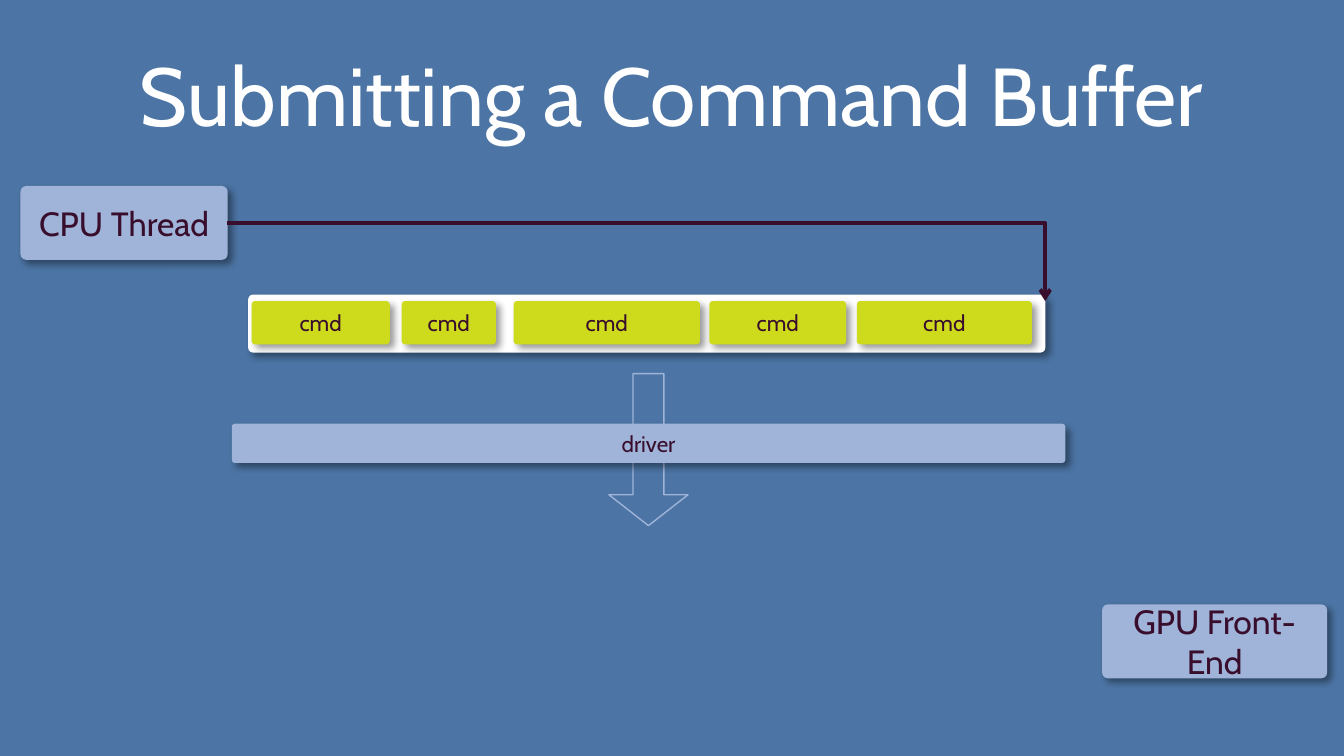
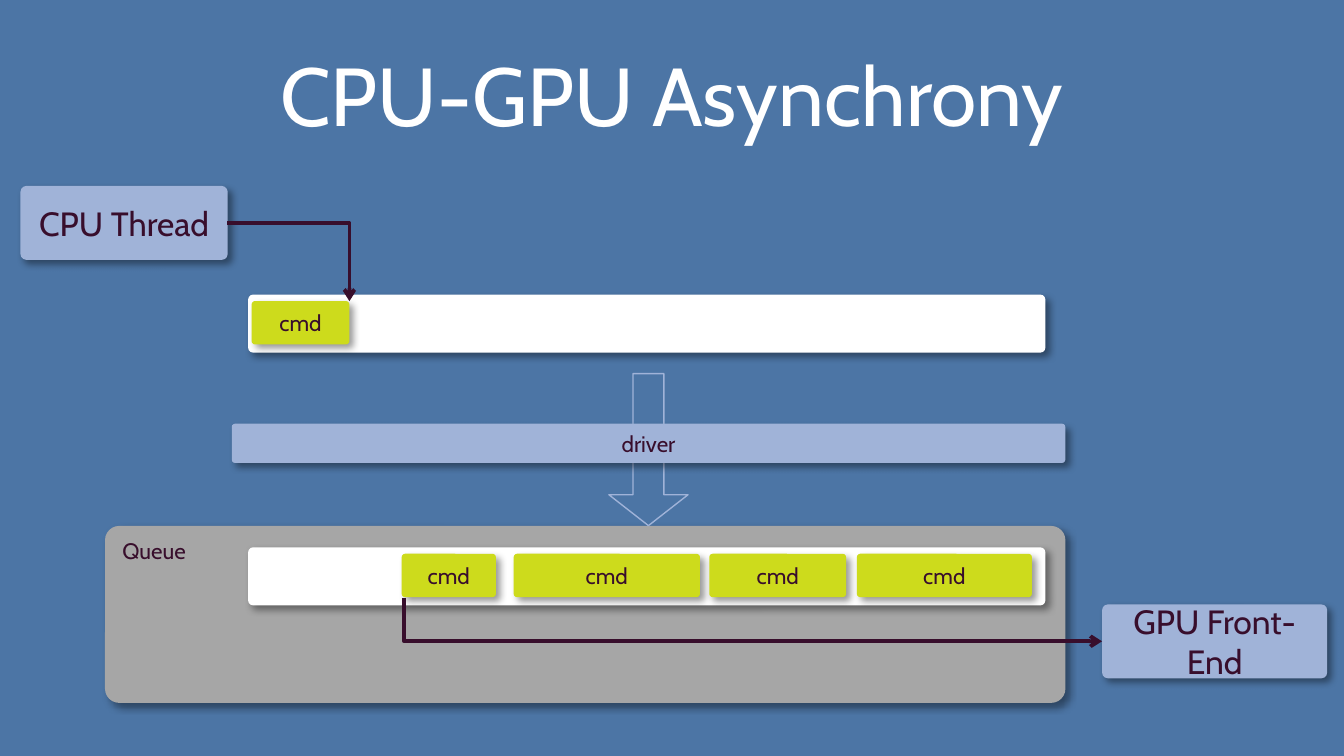
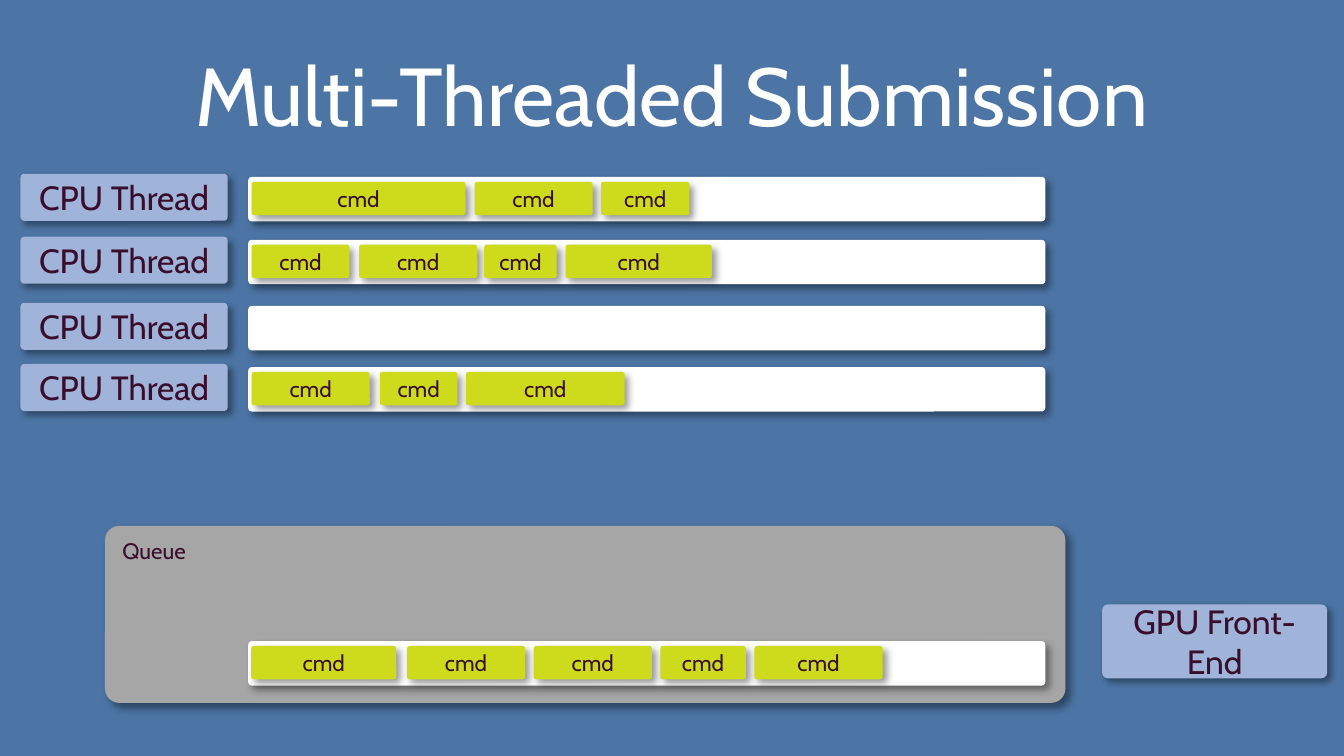
from lxml.etree import SubElement
from pptx import Presentation
from pptx.dml.color import RGBColor
from pptx.enum.shapes import MSO_CONNECTOR, MSO_SHAPE
from pptx.enum.text import MSO_ANCHOR, MSO_AUTO_SIZE, PP_ALIGN
from pptx.oxml.ns import qn
from pptx.util import Pt

# Shared style
BLUE = RGBColor(0x4C, 0x75, 0xA5)
LILAC = RGBColor(0xA0, 0xB3, 0xD8)
GRAY = RGBColor(0xA6, 0xA6, 0xA6)
LIME = RGBColor(0xCD, 0xDB, 0x1C)
PLUM = RGBColor(0x38, 0x0E, 0x2C)
WHITE = RGBColor(0xFF, 0xFF, 0xFF)
FONT = "Cabin"
TITLE_ONLY = 5

# Shared positions in points
THREAD_LEFT, THREAD_WIDTH = 11, 111
BUFFER_LEFT, BUFFER_WIDTH = 133, 427
TALL, LOW = 31, 23.8
BUFFER_TOP, QUEUED_TOP = 157.9, 293.3

# Commands as (left, width)
FIVE_COMMANDS = [(134.8, 74), (215.2, 50.5), (275.2, 99.8), (380, 73.3), (459, 93.8)]
FIRST_COMMAND = [(134.8, 52.4)]
THREADS = [
    (93.1, [(134.8, 114.6), (254.2, 63.3), (322, 47.4)]),
    (126.8, [(134.8, 52.4), (192.4, 63.3), (259.4, 38.9), (303, 78.4)]),
    (162.2, []),
    (195, [(134.8, 63.3), (203.5, 41.6), (249.6, 85)]),
]
QUEUED_COMMANDS = [(134.6, 77.7), (218, 63.3), (285.9, 63.3), (353.7, 45.9), (404.2, 68.7)]


class Diagram:
    """Holds the style and the current slide."""

    def __init__(self):
        self.deck = Presentation()
        self.deck.slide_width, self.deck.slide_height = Pt(720), Pt(405)
        fill = self.deck.slide_master.background.fill
        fill.solid()
        fill.fore_color.rgb = BLUE
        self.slide = None

    def add_text(self, frame, text, size, color, align):
        para = frame.paragraphs[0]
        para.alignment = align
        span = para.add_run()
        span.text = text
        span.font.name, span.font.size = FONT, Pt(size)
        span.font.color.rgb = color

    def new_slide(self, heading):
        self.slide = self.deck.slides.add_slide(self.deck.slide_layouts[TITLE_ONLY])
        title = self.slide.shapes.title
        title.left, title.top, title.width, title.height = Pt(36), Pt(16.5), Pt(648), Pt(67.5)
        frame = title.text_frame
        frame.word_wrap, frame.auto_size = True, MSO_AUTO_SIZE.NONE
        frame.vertical_anchor = MSO_ANCHOR.MIDDLE
        self.add_text(frame, heading, 44, WHITE, PP_ALIGN.CENTER)

    def add_shadow(self, box):
        box.shadow.inherit = False
        effects = box.element.spPr.find(qn("a:effectLst"))
        shadow = SubElement(effects, qn("a:outerShdw"), blurRad=str(Pt(4)), dist=str(Pt(3)),
                            dir=str(45 * 60000), algn="tl", rotWithShape="0")
        color = SubElement(shadow, qn("a:srgbClr"), val="000000")
        SubElement(color, qn("a:alpha"), val="40000")

    def box(self, left, top, width, height, fill, text="", size=12,
            align=PP_ALIGN.CENTER, anchor=MSO_ANCHOR.MIDDLE, parent=None):
        shapes = (parent or self.slide).shapes
        box = shapes.add_shape(MSO_SHAPE.ROUNDED_RECTANGLE,
                               Pt(left), Pt(top), Pt(width), Pt(height))
        box.adjustments[0] = 0.08
        box.fill.solid()
        box.fill.fore_color.rgb = fill
        box.line.fill.background()
        self.add_shadow(box)
        if text:
            box.text_frame.word_wrap = True
            box.text_frame.vertical_anchor = anchor
            self.add_text(box.text_frame, text, size, PLUM, align)

    def thread(self, top, height):
        self.box(THREAD_LEFT, top, THREAD_WIDTH, height, LILAC, "CPU Thread", 18)

    def front_end(self):
        self.box(590.4, 323.8, 120.6, 39.6, LILAC, "GPU Front-End", 18)

    def queue(self):
        self.box(56.3, 281.8, 514.5, 94.8, GRAY, "Queue", 12, PP_ALIGN.LEFT, MSO_ANCHOR.TOP)

    def driver(self):
        self.box(124.2, 227, 446.5, 21, LILAC, "driver")

    def buffer(self, top, height, commands, parent=None):
        self.box(BUFFER_LEFT, top, BUFFER_WIDTH, height, WHITE, parent=parent)
        for left, width in commands:
            self.box(left, top + 0.11 * height, width, 0.75 * height, LIME, "cmd", parent=parent)

    def down_arrow(self):
        arrow = self.slide.shapes.add_shape(MSO_SHAPE.DOWN_ARROW,
                                            Pt(326.2), Pt(200.2), Pt(42.4), Pt(81.4))
        arrow.adjustments[0] = arrow.adjustments[1] = 0.39
        arrow.fill.background()
        arrow.line.color.rgb, arrow.line.width = LILAC, Pt(0.75)
        arrow.shadow.inherit = False

    def bent_arrow(self, x1, y1, x2, y2, down_first=False):
        ends = (x1, y1, x2, y2)
        if down_first:
            # The frame is turned a quarter about its centre
            mid_x, mid_y = (x1 + x2) / 2, (y1 + y2) / 2
            half_w, half_h = (y2 - y1) / 2, (x2 - x1) / 2
            ends = (mid_x + half_w, mid_y - half_h, mid_x - half_w, mid_y + half_h)
        arrow = self.slide.shapes.add_connector(MSO_CONNECTOR.ELBOW, *map(Pt, ends))
        arrow.line.color.rgb, arrow.line.width = PLUM, Pt(2)
        properties = arrow.element.spPr
        properties.find(qn("a:prstGeom")).set("prst", "bentConnector2")
        if down_first:
            properties.find(qn("a:xfrm")).set("rot", str(270 * 60000))
        SubElement(properties.find(qn("a:ln")), qn("a:tailEnd"), type="arrow")
        SubElement(properties, qn("a:effectLst"))

    def submission(self, commands):
        """Thread, buffer and driver of the single-threaded slides."""
        self.down_arrow()
        self.thread(99.6, 39.6)
        self.front_end()
        self.buffer(BUFFER_TOP, TALL, commands)
        self.driver()


def main():
    diagram = Diagram()

    # Submitting a full buffer
    diagram.new_slide("Submitting a Command Buffer")
    diagram.submission(FIVE_COMMANDS)
    diagram.bent_arrow(121.7, 119.5, 560, 161.3)

    # The GPU reads one buffer while the CPU fills the next
    diagram.new_slide("CPU-GPU Asynchrony")
    diagram.queue()
    diagram.submission(FIRST_COMMAND)
    diagram.buffer(QUEUED_TOP, TALL, FIVE_COMMANDS[1:])
    diagram.bent_arrow(216.5, 320.4, 590.4, 343.6, down_first=True)
    diagram.bent_arrow(121.7, 119.5, 187.2, 161.3)

    # One buffer per thread
    diagram.new_slide("Multi-Threaded Submission")
    diagram.queue()
    diagram.front_end()
    for top, commands in THREADS:
        diagram.thread(top, 25.2)
        diagram.buffer(top + 1.7, LOW, commands)
    group = diagram.slide.shapes.add_group_shape()
    diagram.buffer(343.5, LOW, QUEUED_COMMANDS, group)

    diagram.deck.save("out.pptx")


if __name__ == "__main__":
    main()
